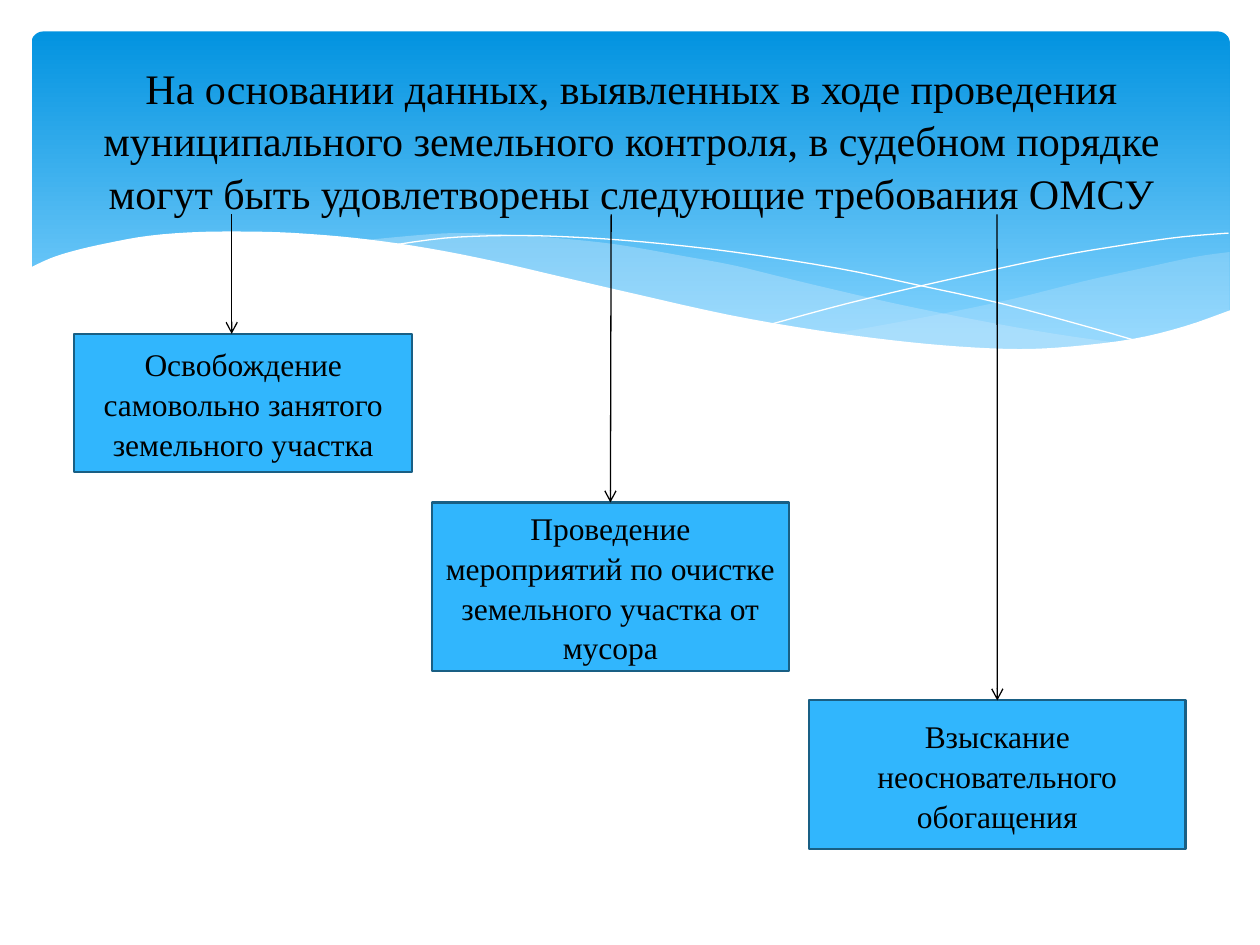
from lxml import etree
from pptx import Presentation
from pptx import util as u
from pptx.dml.color import RGBColor
from pptx.enum import shapes, text
from pptx.oxml.ns import qn

FONT = "Times New Roman"
LINE_SPACING = 1.05
GRID = 1000  # backdrop units across the page width

# Curves of the backdrop, in grid units
RIGHT_CREST = [(976, 200), (948, 204), (906, 213), (861, 223), (805, 237),
               (753, 248), (706, 257), (661, 265)]
RIGHT_TROUGH = [(661, 265), (691, 269), (732, 274), (769, 277), (814, 278),
                (854, 276), (889, 272), (921, 265), (949, 257), (976, 247)]
LEFT_CREST = [(893, 273), (837, 265), (775, 254), (706, 240), (629, 222),
              (584, 211), (541, 203), (489, 194), (442, 189), (399, 186),
              (361, 185), (328, 187), (286, 191)]
LEFT_TROUGH = [(286, 191), (342, 199), (404, 211), (449, 222), (530, 240),
               (601, 255), (665, 266), (722, 274), (773, 277), (818, 278),
               (857, 277), (893, 273)]
FALLING_THREAD = [(309, 195), (353, 189), (401, 187), (450, 188), (510, 192),
                  (582, 200), (665, 213), (727, 226), (795, 241), (869, 261),
                  (907, 272)]
RISING_THREAD = [(613, 257), (672, 241), (748, 223), (836, 204), (895, 194),
                 (938, 188), (975, 185)]
FRONT_WAVE = [(977, 246), (940, 259), (899, 269), (850, 275), (809, 277),
              (761, 275), (708, 270), (648, 262), (579, 250), (503, 233),
              (447, 220), (391, 207), (340, 197), (292, 190), (250, 186),
              (211, 184), (161, 184), (119, 187), (85, 193), (59, 199),
              (40, 205), (23, 213)]


def paint(color_format, color):
    color_format.rgb = RGBColor.from_string(color)


def fill_solid(shape, color, opacity=100):
    shape.fill.solid()
    paint(shape.fill.fore_color, color)
    if opacity < 100:
        tint = shape.fill._xPr.find(qn("a:solidFill"))[0]
        etree.SubElement(tint, qn("a:alpha"), val=str(opacity * 1000))


def smooth(points, steps=4):
    """Return a Catmull-Rom curve through the points."""
    ends = [points[0], *points, points[-1]]
    curve = []
    for a, b, c, d in zip(ends, ends[1:], ends[2:], ends[3:]):
        for step in range(steps):
            t = step / steps
            curve.append(tuple(
                (2 * q + (r - p) * t + (2 * p - 5 * q + 4 * r - s) * t ** 2
                 + (3 * q - p - 3 * r + s) * t ** 3) / 2
                for p, q, r, s in zip(a, b, c, d)))
    return curve + [points[-1]]


def add_outline(page, points, left, top, unit, close):
    first, *rest = [(left + x * unit, top + y * unit) for x, y in points]
    builder = page.shapes.build_freeform(round(first[0]), round(first[1]))
    builder.add_line_segments(rest, close=close)
    outline = builder.convert_to_shape()
    outline.shadow.inherit = False
    return outline


def draw_backdrop(page, left, top, width):
    unit = width / GRID
    panel = page.shapes.add_shape(
        shapes.MSO_SHAPE.ROUNDED_RECTANGLE, round(left + 25 * unit),
        round(top + 25 * unit), round(951 * unit), round(270 * unit))
    panel.adjustments[0] = 0.034
    panel.shadow.inherit = False
    panel.line.fill.background()
    panel.fill.gradient()
    panel.fill.gradient_angle = 270
    for stop, position, color in zip(panel.fill.gradient_stops, (0, 0.9),
                                     ("0293E0", "83D3FE")):
        stop.position = position
        paint(stop.color, color)

    def add_wave(points, color, opacity):
        wave = add_outline(page, points, left, top, unit, True)
        fill_solid(wave, color, opacity)
        wave.line.fill.background()

    add_wave(smooth(RIGHT_CREST) + smooth(RIGHT_TROUGH), "C6E7FC", 29)
    add_wave(smooth(LEFT_CREST) + smooth(LEFT_TROUGH), "C6E7FC", 40)
    for points in (FALLING_THREAD, RISING_THREAD):
        thread = add_outline(page, smooth(points), left, top, unit, False)
        thread.fill.background()
        paint(thread.line.color, "FFFFFF")
        thread.line.width = u.Pt(0)
    add_wave(smooth(FRONT_WAVE) + [(23, 329), (977, 329)], "FFFFFF", 100)


def write_centred(shape, wording, size):
    frame = shape.text_frame
    frame.word_wrap = True
    frame.vertical_anchor = text.MSO_ANCHOR.MIDDLE
    para = frame.paragraphs[0]
    para.text = wording
    para.alignment = text.PP_ALIGN.CENTER
    para.line_spacing = LINE_SPACING
    para.font.name = FONT
    para.font.size = u.Pt(size)
    paint(para.font.color, "000000")


def add_title(page, left, top, width, height):
    title = page.shapes.add_textbox(left, top, width, height)
    write_centred(title, "На основании данных, выявленных в ходе проведения "
                  "муниципального земельного контроля, в судебном порядке "
                  "могут быть удовлетворены следующие требования ОМСУ", 24)


def add_claim(page, wording, left, top, width, height):
    claim = page.shapes.add_shape(shapes.MSO_SHAPE.RECTANGLE,
                                  left, top, width, height)
    claim.shadow.inherit = False
    fill_solid(claim, "31B6FD")
    paint(claim.line.color, "195F84")
    claim.line.width = u.Pt(1.25)
    write_centred(claim, wording, 18)
    return claim


def add_arrow(page, start_x, start_y, end_x, end_y):
    arrow = page.shapes.add_connector(shapes.MSO_CONNECTOR.STRAIGHT,
                                      start_x, start_y, end_x, end_y)
    paint(arrow.line.color, "000000")
    arrow.line.width = u.Pt(0.75)
    etree.SubElement(arrow.line._get_or_add_ln(), qn("a:tailEnd"), type="arrow")
    etree.SubElement(arrow._element.spPr, qn("a:effectLst"))
    return arrow


def main():
    deck = Presentation()
    deck.slide_width, deck.slide_height = u.Cm(25.4), u.Cm(19.05)
    page = deck.slides.add_slide(deck.slide_layouts[6])
    draw_backdrop(page, 0, 0, deck.slide_width)
    add_title(page, u.Cm(1.3), u.Cm(1.2), u.Cm(22.86), u.Cm(3.2))

    # wording, box in cm, arrow x in cm, whether it meets the box's middle
    claims = [
        ("Освобождение самовольно занятого земельного участка",
         (1.5, 6.73, 6.81, 2.79), 4.67, False),
        ("Проведение мероприятий по очистке земельного участка от мусора",
         (8.71, 10.13, 7.19, 3.4), 12.32, True),
        ("Взыскание неосновательного обогащения",
         (16.31, 14.12, 7.59, 3.0), 20.1, True),
    ]
    for wording, box, arrow_x, centred in claims:
        claim = add_claim(page, wording, *map(u.Cm, box))
        arrow = add_arrow(page, u.Cm(arrow_x), u.Cm(4.32),
                          u.Cm(arrow_x), claim.top)
        if centred:
            arrow.end_connect(claim, 0)
    deck.save("out.pptx")


if __name__ == "__main__":
    main()
